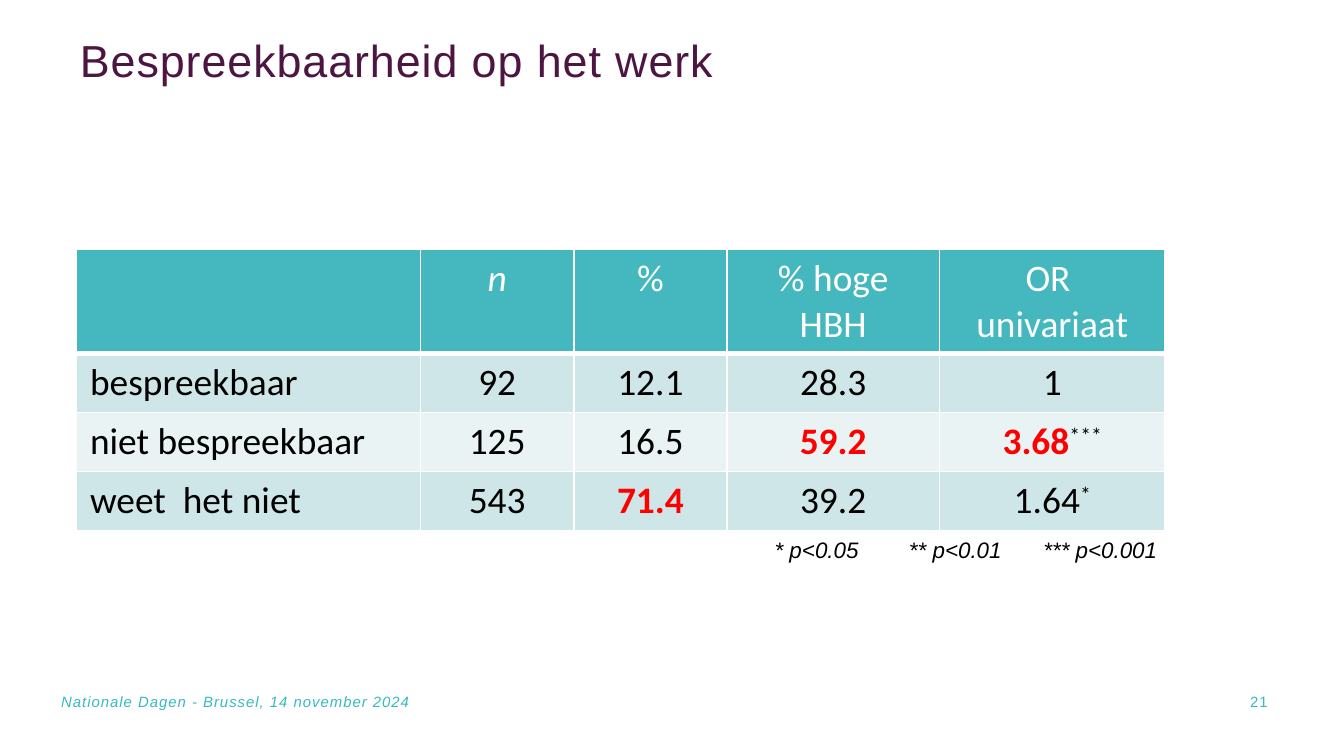
from dataclasses import dataclass

from lxml import etree
from pptx import Presentation
from pptx.dml.color import RGBColor
from pptx.enum import text
from pptx.oxml.ns import qn
from pptx.util import Emu, Pt

PX = 4572  # EMU per px, 200 px to the inch
LEFT, CENTER, RIGHT = text.PP_ALIGN.LEFT, text.PP_ALIGN.CENTER, text.PP_ALIGN.RIGHT


@dataclass(frozen=True)
class Theme:
    title: str = "4D1642"
    footer: str = "37B9C2"
    header: str = "44B8BE"
    bands: tuple = ("CFE6E8", "E9F3F4")
    white: str = "FFFFFF"
    ink: str = "000000"
    accent: str = "FF0000"
    sans: str = "Arial"
    table_font: str = "Calibri"
    title_size: int = 24
    table_size: int = 20
    note_size: int = 12
    footer_size: int = 8


THEME = Theme()


def px(*lengths):
    return [Emu(length * PX) for length in lengths]


def add_span(para, words, *, size, color, font=THEME.sans, bold=False,
             italic=False, spacing=0, baseline=0):
    span = para.add_run()
    span.text = words
    span.font.name, span.font.size = font, Pt(size)
    span.font.bold, span.font.italic = bold, italic
    span.font.color.rgb = RGBColor.from_string(color)
    properties = span._r.get_or_add_rPr()
    for name, value in (("spc", spacing), ("baseline", baseline)):
        if value:
            properties.set(name, str(value))


def add_label(page, box, words, *, align=LEFT, anchor=text.MSO_ANCHOR.TOP,
              inset=True, line_spacing=None, **style):
    frame = page.shapes.add_textbox(*px(*box)).text_frame
    frame.word_wrap = True
    frame.vertical_anchor = anchor
    if not inset:
        frame.margin_left = frame.margin_right = 0
        frame.margin_top = frame.margin_bottom = 0
    para = frame.paragraphs[0]
    para.alignment = align
    if line_spacing:
        para.line_spacing = line_spacing
    add_span(para, words, **style)


def add_borders(cell, top, bottom):
    properties = cell._tc.get_or_add_tcPr()
    for side, width in (("L", 1), ("R", 1), ("T", top), ("B", bottom)):
        line = etree.SubElement(properties, qn(f"a:ln{side}"), w=str(Pt(width)))
        fill = etree.SubElement(line, qn("a:solidFill"))
        etree.SubElement(fill, qn("a:srgbClr"), val=THEME.white)


def add_title(page, box):
    add_label(page, box, "Bespreekbaarheid op het werk", inset=False, line_spacing=0.8,
              size=THEME.title_size, color=THEME.title, spacing=50)


def plain(words):
    return [[(words, {})]]


def add_results(page, box):
    left, top, width, height = box
    red = {"color": THEME.accent, "bold": True}
    raised = {"baseline": 30000}
    # Each cell is a list of paragraphs, each paragraph a list of (words, format)
    rows = [
        [[], [[("n", {"italic": True})]], plain("%"), plain("% hoge HBH"),
         plain("OR ") + plain("univariaat")],
        [plain(words) for words in ("bespreekbaar", "92", "12.1", "28.3", "1")],
        [plain("niet bespreekbaar"), plain("125"), plain("16.5"), [[("59.2", red)]],
         [[("3.68", red), ("***", raised)]]],
        [plain("weet  het niet"), plain("543"), [[("71.4", red)]], plain("39.2"),
         [[("1.64", {}), ("*", raised)]]],
    ]
    first_widths = (512, 228, 228, 316)
    column_widths = (*first_widths, width - sum(first_widths))
    body_height = 88
    header_height = height - body_height * (len(rows) - 1)

    table = page.shapes.add_table(len(rows), len(column_widths), *px(*box)).table
    for column, length in zip(table.columns, px(*column_widths)):
        column.width = length
    for r, row in enumerate(rows):
        is_header = r == 0
        table.rows[r].height = Emu((header_height if is_header else body_height) * PX)
        fill = THEME.header if is_header else THEME.bands[(r - 1) % 2]
        base = {"size": THEME.table_size, "font": THEME.table_font,
                "color": THEME.white if is_header else THEME.ink}
        for c, paragraphs in enumerate(row):
            cell = table.cell(r, c)
            add_borders(cell, top=3 if r == 1 else 1, bottom=3 if is_header else 1)
            cell.fill.solid()
            cell.fill.fore_color.rgb = RGBColor.from_string(fill)
            for p, spans in enumerate(paragraphs):
                para = cell.text_frame.add_paragraph() if p else cell.text_frame.paragraphs[0]
                para.alignment = CENTER if c else LEFT
                for words, style in spans:
                    add_span(para, words, **{**base, **style})


def add_significance(page, box):
    add_label(page, box, "* p<0.05\t** p<0.01\t*** p<0.001", align=RIGHT,
              size=THEME.note_size, color=THEME.ink, italic=True)


def add_footer(page, box):
    left, top, width, height = box
    style = {"size": THEME.footer_size, "color": THEME.footer, "spacing": 50,
             "anchor": text.MSO_ANCHOR.MIDDLE}
    number_width = 330
    add_label(page, (left + width - number_width, top, number_width, height), "21",
              align=RIGHT, **style)
    add_label(page, (left, top, 1604, height), "Nationale Dagen - Brussel, 14 november 2024",
              inset=False, italic=True, **style)


def main():
    deck = Presentation()
    deck.slide_width, deck.slide_height = px(2000, 1125)
    page = deck.slides.add_slide(deck.slide_layouts[6])
    add_title(page, (119, 64, 1476, 122))
    add_footer(page, (91, 1014, 1815, 60))
    add_results(page, (114, 371, 1620, 419))
    add_significance(page, (750, 788, 992, 60))
    deck.save("out.pptx")


if __name__ == "__main__":
    main()
